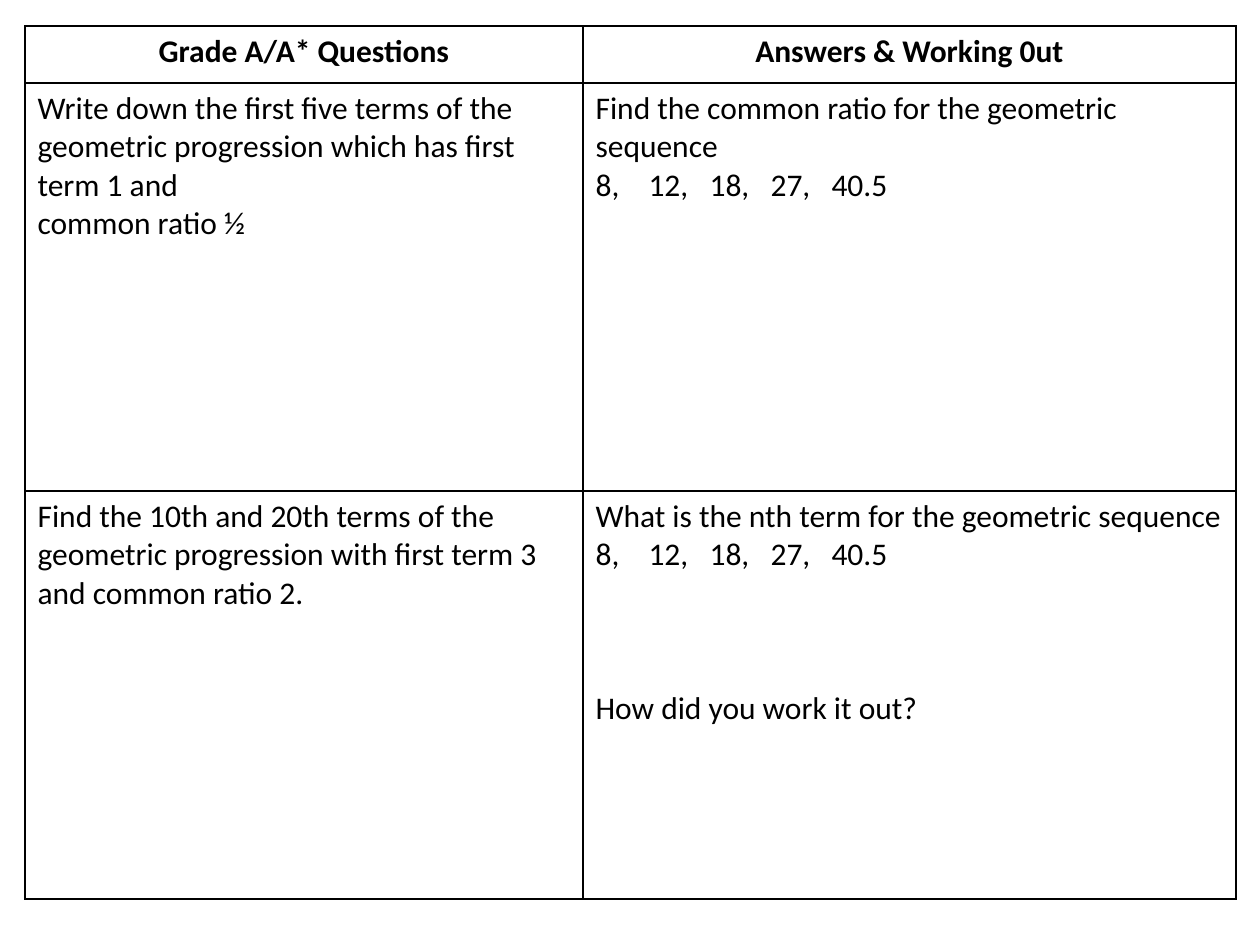
from dataclasses import dataclass

from lxml.etree import SubElement
from pptx import Presentation
from pptx.dml.color import RGBColor
from pptx.enum.text import PP_ALIGN
from pptx.oxml.ns import qn
from pptx.table import _Cell
from pptx.text.text import _Paragraph
from pptx.util import Emu, Pt

DPI = 126


def px(n: int) -> Emu:
    return Emu(round(n * 914400 / DPI))


@dataclass(frozen=True)
class Theme:
    font: str = "Calibri"
    size: int = 18
    ink: str = "000000"
    paper: str = "FFFFFF"
    rule: int = 1


@dataclass(frozen=True)
class Line:
    text: str
    head: bool = False
    gap: int = 0  # points above
    tabs: tuple[int, ...] = ()


THEME = Theme()
LEFT, TOP = 25, 26
COLS = (558, 653)
ROWS = (57, 408, 408)
ROOM = 66  # three empty lines for working

TERMS = Line("8,\t12,\t18,\t27,\t40.5", tabs=(53, 114, 175, 236))
GRID = (
    (
        (Line("Grade A/A* Questions", head=True),),
        (Line("Answers & Working 0ut", head=True),),
    ),
    (
        (
            Line("Write down the first five terms of the geometric "
                 "progression which has first term 1 and"),
            Line("common ratio ½"),
        ),
        (Line("Find the common ratio for the geometric sequence"), TERMS),
    ),
    (
        (
            Line("Find the 10th and 20th terms of the geometric "
                 "progression with first term 3 and common ratio 2."),
        ),
        (
            Line("What is the nth term for the geometric sequence"),
            TERMS,
            Line("How did you work it out?", gap=ROOM),
        ),
    ),
)


def set_tabs(para: _Paragraph, stops: tuple[int, ...]) -> None:
    tabs = SubElement(para._p.get_or_add_pPr(), qn("a:tabLst"))
    for stop in stops:
        SubElement(tabs, qn("a:tab"), pos=str(px(stop)), algn="l")


def write(para: _Paragraph, line: Line) -> None:
    para.alignment = PP_ALIGN.CENTER if line.head else PP_ALIGN.LEFT
    para.space_before = Pt(line.gap)
    if line.tabs:
        set_tabs(para, line.tabs)
    run = para.add_run()
    run.text = line.text
    font = run.font
    font.name = THEME.font
    font.size = Pt(THEME.size)
    font.bold = line.head
    font.color.rgb = RGBColor.from_string(THEME.ink)


def frame(cell: _Cell) -> None:
    """Rule all four sides, then fill the cell."""
    props = cell._tc.get_or_add_tcPr()
    for side in "LRTB":
        edge = SubElement(props, qn(f"a:ln{side}"), w=str(Pt(THEME.rule)))
        fill = SubElement(edge, qn("a:solidFill"))
        SubElement(fill, qn("a:srgbClr"), val=THEME.ink)
    cell.fill.solid()
    cell.fill.fore_color.rgb = RGBColor.from_string(THEME.paper)


def fill_cell(cell: _Cell, lines: tuple[Line, ...]) -> None:
    frame(cell)
    text = cell.text_frame
    for i, line in enumerate(lines):
        write(text.add_paragraph() if i else text.paragraphs[0], line)


def main() -> None:
    deck = Presentation()
    deck.slide_width, deck.slide_height = px(10 * DPI), px(945)
    slide = deck.slides.add_slide(deck.slide_layouts[6])
    table = slide.shapes.add_table(
        len(ROWS), len(COLS), px(LEFT), px(TOP), px(sum(COLS)), px(sum(ROWS))
    ).table
    table.first_row = table.horz_banding = False
    for col, width in zip(table.columns, COLS):
        col.width = px(width)
    for row, height, cells in zip(table.rows, ROWS, GRID):
        row.height = px(height)
        for cell, lines in zip(row.cells, cells):
            fill_cell(cell, lines)
    deck.save("out.pptx")


if __name__ == "__main__":
    main()
